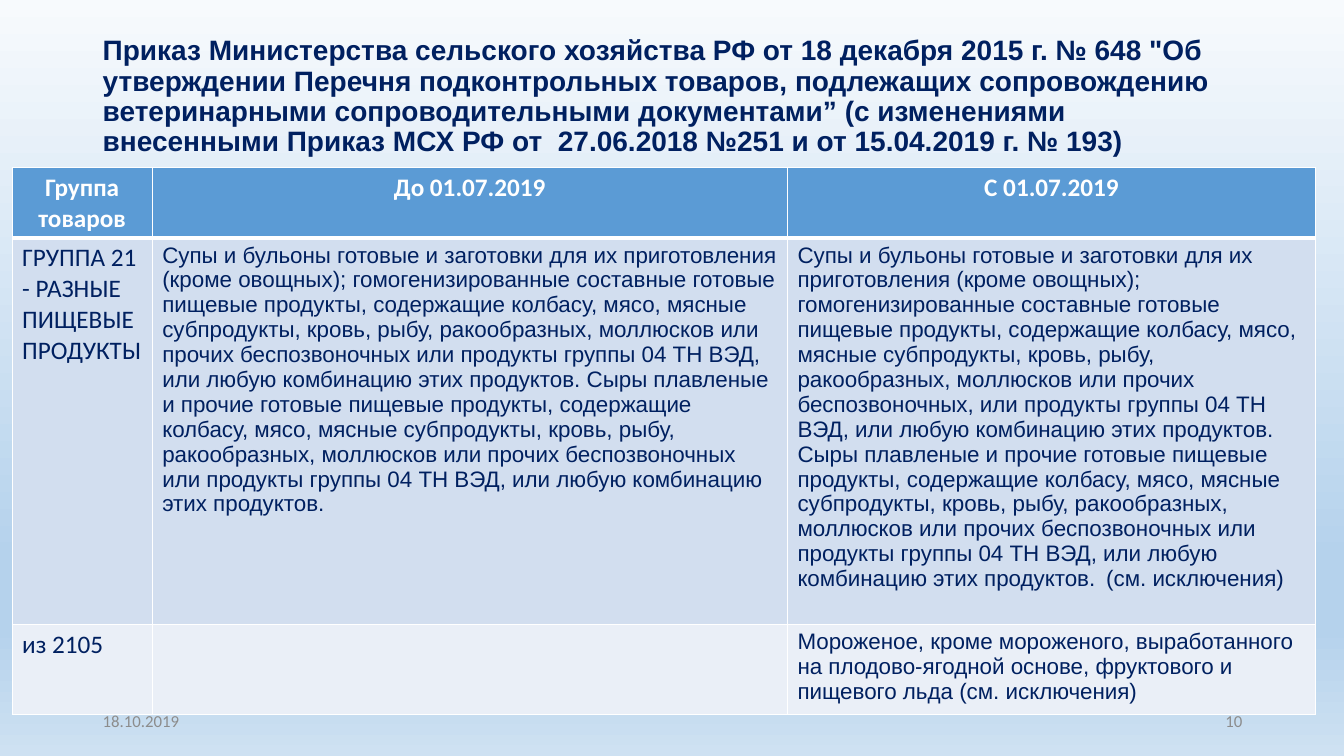
from lxml import etree
from pptx import Presentation
from pptx.dml.color import RGBColor
from pptx.enum.text import MSO_ANCHOR as Anchor, PP_ALIGN as Align
from pptx.oxml import parse_xml
from pptx.oxml.ns import nsdecls, qn
from pptx.util import Inches, Pt

COLORS = {
    "navy": "002060", "white": "FFFFFF", "grey": "8C8C8C",
    "header": "5B9BD5", "band": "D2DEEF", "light_band": "EAEFF7",
}
BACKGROUND_STOPS = [(0, "F7FAFD"), (74, "B5D2EC"), (83, "B5D2EC"), (100, "CEE1F2")]


def write(frame, text, size, font, color, bold=False, align=Align.LEFT):
    """Put one formatted run into the frame and return its paragraph."""
    frame.word_wrap = True
    paragraph = frame.paragraphs[0]
    paragraph.alignment = align
    run = paragraph.add_run()
    run.text = text
    run.font.size = Pt(size)
    run.font.name = font
    run.font.bold = bold
    run.font.color.rgb = RGBColor.from_string(COLORS[color])
    return paragraph


def set_borders(cell, bottom_width):
    """Draw white cell edges, ahead of the fill as the schema requires."""
    properties = cell._tc.get_or_add_tcPr()
    widths = {"lnL": 1, "lnR": 1, "lnT": 1, "lnB": bottom_width}
    for position, (edge, width) in enumerate(widths.items()):
        properties.insert(position, parse_xml(
            f'<a:{edge} {nsdecls("a")} w="{Pt(width)}"><a:solidFill>'
            f'<a:srgbClr val="{COLORS["white"]}"/></a:solidFill></a:{edge}>'))


prs = Presentation()
prs.slide_width = Inches(13.33)
prs.slide_height = Inches(7.5)
slide = prs.slides.add_slide(prs.slide_layouts[6])

# Background
background = slide.background.fill
background.gradient()
background.gradient_angle = 270
stop_list = slide.background._cSld.find(".//" + qn("a:gsLst"))
for old_stop in list(stop_list):
    stop_list.remove(old_stop)
for percent, color in BACKGROUND_STOPS:
    stop = etree.SubElement(stop_list, qn("a:gs"), pos=str(percent * 1000))
    etree.SubElement(stop, qn("a:srgbClr"), val=color)

# Title
title = slide.shapes.add_textbox(Inches(0.92), Inches(0.4), Inches(11.5), Inches(1.45)).text_frame
title.vertical_anchor = Anchor.MIDDLE
title.margin_bottom = Inches(0.37)
heading = write(
    title,
    'Приказ Министерства сельского хозяйства РФ от 18 декабря 2015 г. № 648 "Об утверждении '
    "Перечня подконтрольных товаров, подлежащих сопровождению ветеринарными "
    "сопроводительными документами” (с изменениями внесенными Приказ МСХ РФ от  27.06.2018 "
    "№251 и от 15.04.2019 г. № 193)",
    20, "Arial", "navy", bold=True)
heading.line_spacing = 0.9

# Comparison table
rows = [
    ("Группа товаров", "До 01.07.2019", "С 01.07.2019"),
    (
        "ГРУППА 21 - РАЗНЫЕ ПИЩЕВЫЕ ПРОДУКТЫ",
        "Супы и бульоны готовые и заготовки для их приготовления (кроме овощных); "
        "гомогенизированные составные готовые пищевые продукты, содержащие колбасу, мясо, "
        "мясные субпродукты, кровь, рыбу, ракообразных, моллюсков или прочих беспозвоночных "
        "или продукты группы 04 ТН ВЭД, или любую комбинацию этих продуктов. Сыры плавленые "
        "и прочие готовые пищевые продукты, содержащие колбасу, мясо, мясные субпродукты, "
        "кровь, рыбу, ракообразных, моллюсков или прочих беспозвоночных или продукты группы "
        "04 ТН ВЭД, или любую комбинацию этих продуктов.",
        "Супы и бульоны готовые и заготовки для их приготовления (кроме овощных); "
        "гомогенизированные составные готовые пищевые продукты, содержащие колбасу, мясо, "
        "мясные субпродукты, кровь, рыбу, ракообразных, моллюсков или прочих беспозвоночных, "
        "или продукты группы 04 ТН ВЭД, или любую комбинацию этих продуктов. Сыры плавленые "
        "и прочие готовые пищевые продукты, содержащие колбасу, мясо, мясные субпродукты, "
        "кровь, рыбу, ракообразных, моллюсков или прочих беспозвоночных или продукты группы "
        "04 ТН ВЭД, или любую комбинацию этих продуктов.\t (см. исключения)",
    ),
    (
        "из 2105",
        "",
        "Мороженое, кроме мороженого, выработанного на плодово-ягодной основе, фруктового "
        "и пищевого льда (см. исключения)",
    ),
]
# The body rows grow to fit their text
row_heights = [0.7, 0.41, 0.41]
column_widths = [1.39, 6.3, 5.24]
row_fills = ["header", "band", "light_band"]

table = slide.shapes.add_table(
    len(rows), len(column_widths), Inches(0.12), Inches(1.66),
    Inches(sum(column_widths)), Inches(sum(row_heights))).table
for column, width in zip(table.columns, column_widths):
    column.width = Inches(width)
for row_index, texts in enumerate(rows):
    table.rows[row_index].height = Inches(row_heights[row_index])
    is_header = row_index == 0
    for column_index, text in enumerate(texts):
        cell = table.cell(row_index, column_index)
        cell.fill.solid()
        cell.fill.fore_color.rgb = RGBColor.from_string(COLORS[row_fills[row_index]])
        set_borders(cell, bottom_width=3 if is_header else 1)
        if is_header:
            write(cell.text_frame, text, 18, "Calibri", "white", bold=True, align=Align.CENTER)
        elif column_index == 0:
            write(cell.text_frame, text, 18, "Calibri", "navy")
        elif text:
            write(cell.text_frame, text, 16, "Arial", "navy")

# Date and page number
for left, text, align in [(0.92, "18.10.2019", Align.LEFT), (9.42, "10", Align.RIGHT)]:
    footer = slide.shapes.add_textbox(Inches(left), Inches(6.95), Inches(3), Inches(0.4)).text_frame
    footer.vertical_anchor = Anchor.MIDDLE
    write(footer, text, 12, "Calibri", "grey", align=align)

prs.save("out.pptx")
